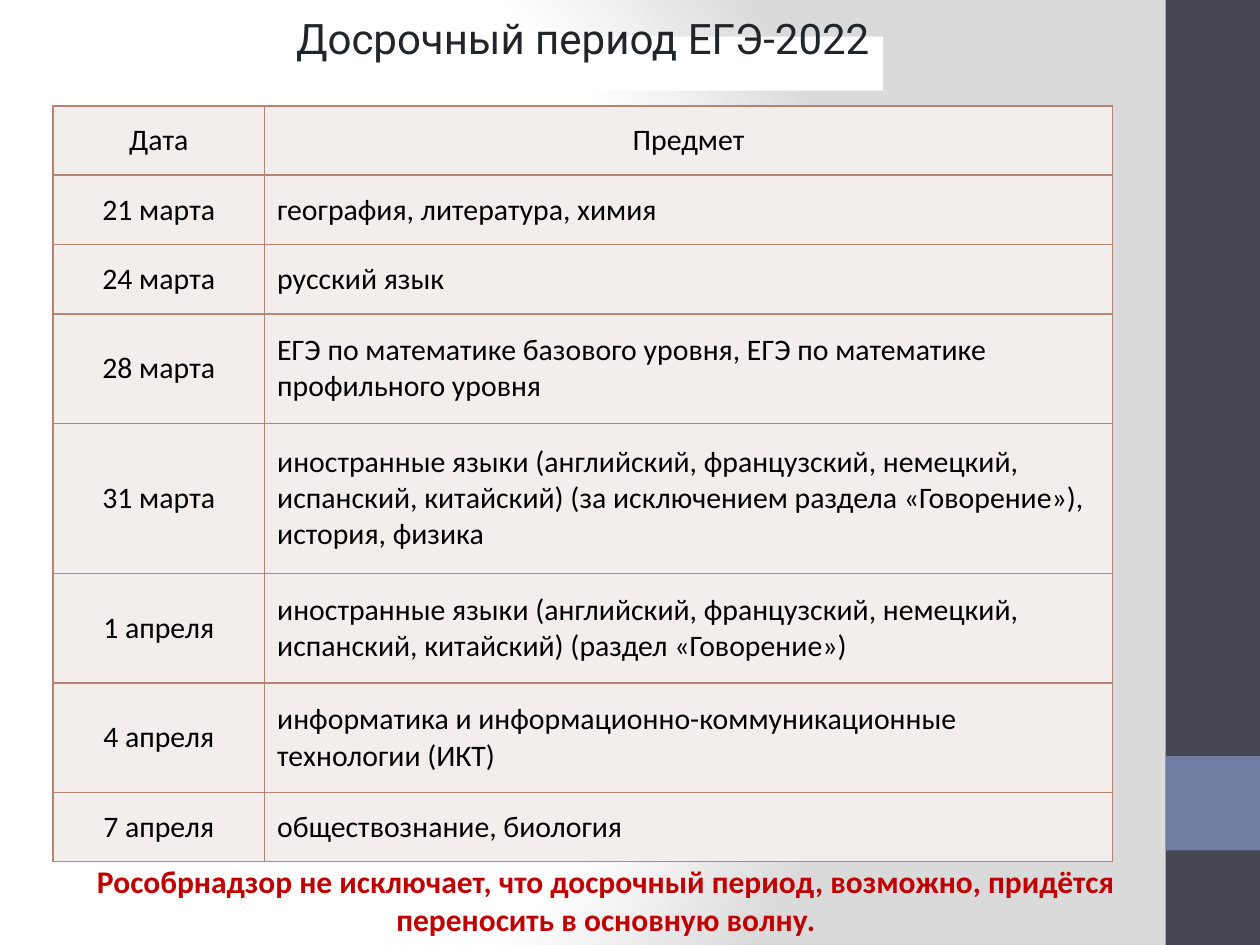
from lxml.etree import SubElement
from pptx import Presentation
from pptx.dml.color import RGBColor
from pptx.enum.shapes import MSO_SHAPE
from pptx.enum.text import MSO_ANCHOR, MSO_AUTO_SIZE, PP_ALIGN
from pptx.oxml import parse_xml
from pptx.oxml.ns import nsdecls, qn
from pptx.util import Inches, Pt

COLORS = {
    "white": "FFFFFF",
    "gray": "DADADA",
    "sidebar": "464653",
    "accent": "727CA3",
    "cell": "F3EDEB",
    "border": "B88472",
    "title": "212529",
    "text": "000000",
    "warning": "C00000",
}

SCHEDULE = [
    ("Дата", "Предмет"),
    ("21 марта", "география, литература, химия"),
    ("24 марта", "русский язык"),
    ("28 марта", "ЕГЭ по математике базового уровня, ЕГЭ по математике профильного уровня"),
    ("31 марта", "иностранные языки (английский, французский, немецкий, испанский, китайский) "
                 "(за исключением раздела «Говорение»), история, физика"),
    ("1 апреля", "иностранные языки (английский, французский, немецкий, испанский, китайский) "
                 "(раздел «Говорение»)"),
    ("4 апреля", "информатика и информационно-коммуникационные технологии (ИКТ)"),
    ("7 апреля", "обществознание, биология"),
]
COLUMN_WIDTHS = [1.68, 6.73]
ROW_HEIGHTS = [0.55, 0.55, 0.55, 0.87, 1.19, 0.87, 0.87, 0.55]


class SlideBuilder:
    def __init__(self, slide, font="Calibri"):
        self.slide = slide
        self.font = font

    def color(self, name):
        return RGBColor.from_string(COLORS[name])

    def box(self, left, top, width, height):
        return [Inches(value) for value in (left, top, width, height)]

    def set_text(self, frame, text, size, color, align=PP_ALIGN.CENTER, bold=False, font=None):
        frame.text = text
        paragraph = frame.paragraphs[0]
        paragraph.alignment = align
        paragraph.font.name = font or self.font
        paragraph.font.size = Pt(size)
        paragraph.font.bold = bold
        paragraph.font.color.rgb = self.color(color)

    def background(self, stops):
        fill = self.slide.background.fill
        fill.solid()
        properties = self.slide.element.cSld.find(qn("p:bg")).find(qn("p:bgPr"))
        stop_list = "".join(
            f'<a:gs pos="{position * 1000}"><a:srgbClr val="{COLORS[name]}"/></a:gs>'
            for position, name in stops)
        gradient = parse_xml(
            f'<a:gradFill {nsdecls("a")} rotWithShape="1"><a:gsLst>{stop_list}</a:gsLst>'
            '<a:path path="circle">'
            '<a:fillToRect l="20000" t="50000" r="100000" b="50000"/>'
            '</a:path></a:gradFill>')
        properties.replace(properties[0], gradient)

    def rectangle(self, left, top, width, height, color):
        shape = self.slide.shapes.add_shape(
            MSO_SHAPE.RECTANGLE, *self.box(left, top, width, height))
        shape.shadow.inherit = False
        shape.fill.solid()
        shape.fill.fore_color.rgb = self.color(color)
        shape.line.fill.background()

    def title(self, text, left, top, width, height):
        title = self.slide.shapes.title
        title.left, title.top, title.width, title.height = self.box(left, top, width, height)
        title.fill.solid()
        title.fill.fore_color.rgb = self.color("white")
        frame = title.text_frame
        frame.auto_size = MSO_AUTO_SIZE.NONE
        frame.word_wrap = False
        frame.vertical_anchor = MSO_ANCHOR.MIDDLE
        # The text sits on the top edge of the white strip
        frame.margin_top, frame.margin_bottom = 0, Inches(0.41)
        self.set_text(frame, text, 24, "title", font="Roboto")

    def cell_borders(self, cell):
        properties = cell._tc.get_or_add_tcPr()
        for index, side in enumerate(("lnL", "lnR", "lnT", "lnB")):
            line = SubElement(properties, qn(f"a:{side}"), w=str(Pt(1)))
            fill = SubElement(line, qn("a:solidFill"))
            SubElement(fill, qn("a:srgbClr"), val=COLORS["border"])
            properties.insert(index, line)

    def table(self, rows, left, top, widths, heights):
        table = self.slide.shapes.add_table(
            len(rows), len(widths),
            *self.box(left, top, sum(widths), sum(heights))).table
        table.first_row = table.horz_banding = False
        for column, width in zip(table.columns, widths):
            column.width = Inches(width)
        for row, height in zip(table.rows, heights):
            row.height = Inches(height)
        for row_index, values in enumerate(rows):
            for column_index, value in enumerate(values):
                cell = table.cell(row_index, column_index)
                cell.fill.solid()
                cell.fill.fore_color.rgb = self.color("cell")
                cell.vertical_anchor = MSO_ANCHOR.MIDDLE
                cell.margin_left = cell.margin_right = Inches(0.1)
                cell.margin_top = cell.margin_bottom = Inches(0.1)
                centered = row_index == 0 or column_index == 0
                align = PP_ALIGN.CENTER if centered else PP_ALIGN.LEFT
                self.set_text(cell.text_frame, value, 17, "text", align)
                self.cell_borders(cell)

    def note(self, text, left, top, width, height):
        frame = self.slide.shapes.add_textbox(*self.box(left, top, width, height)).text_frame
        frame.word_wrap = True
        self.set_text(frame, text, 18, "warning", bold=True)


def main():
    presentation = Presentation()
    presentation.slide_width, presentation.slide_height = Inches(10), Inches(7.5)
    slide = presentation.slides.add_slide(presentation.slide_layouts[5])
    builder = SlideBuilder(slide)

    # Background and sidebar
    builder.background([(0, "white"), (75, "white"), (100, "gray")])
    builder.rectangle(9.25, 0, 0.75, 7.5, "sidebar")
    builder.rectangle(9.25, 6, 0.75, 0.75, "accent")

    # Exam schedule
    builder.title("Досрочный период ЕГЭ-2022", 2.24, 0.29, 4.77, 0.43)
    builder.table(SCHEDULE, 0.42, 0.84, COLUMN_WIDTHS, ROW_HEIGHTS)

    # Warning under the table
    builder.note("Рособрнадзор не исключает, что досрочный период, возможно, "
                 "придётся переносить в основную волну.", 0.36, 6.79, 8.9, 0.71)

    presentation.save("out.pptx")


if __name__ == "__main__":
    main()
